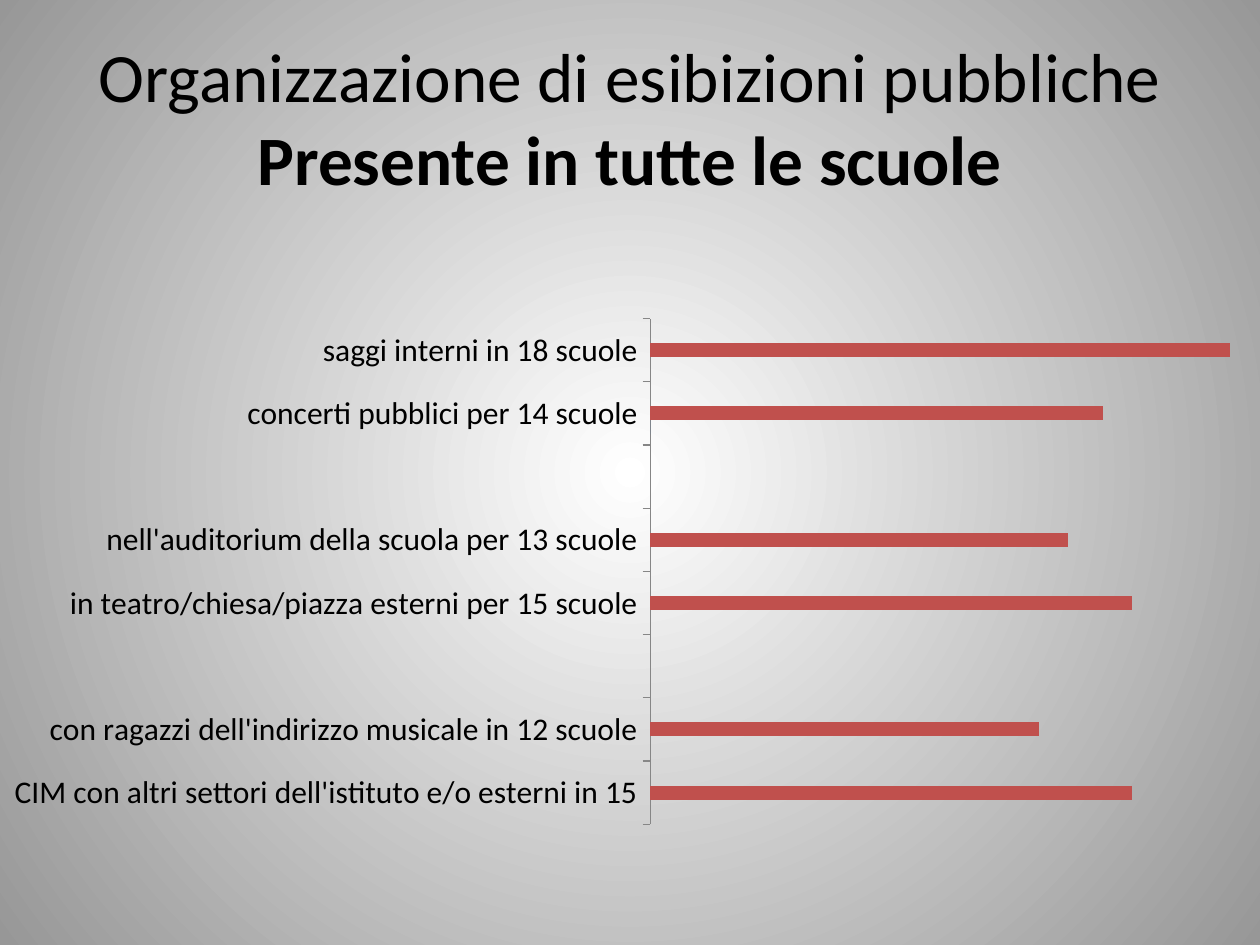
from lxml import etree
from pptx import Presentation
from pptx.chart.data import CategoryChartData
from pptx.dml.color import RGBColor
from pptx.enum.chart import XL_CHART_TYPE, XL_TICK_LABEL_POSITION, XL_TICK_MARK
from pptx.enum.text import MSO_ANCHOR, MSO_AUTO_SIZE, PP_ALIGN
from pptx.oxml import parse_xml
from pptx.oxml.ns import nsdecls, qn
from pptx.util import Inches, Pt

BAR = XL_CHART_TYPE.BAR_CLUSTERED
LOW = XL_TICK_LABEL_POSITION.LOW
TICK_OUT, TICK_NONE = XL_TICK_MARK.OUTSIDE, XL_TICK_MARK.NONE
MIDDLE, CENTER, NO_FIT = MSO_ANCHOR.MIDDLE, PP_ALIGN.CENTER, MSO_AUTO_SIZE.NONE

FONT = "Calibri"
COLORS = {"text": "000000", "center": "FFFFFF", "edge": "979797", "axis": "868686",
          "Series 1": "4F81BD", "Series 2": "C0504D", "Series 3": "9BBB59"}

# Boxes as shares of the slide: left, top, width, height
TITLE_BOX = (0.05, 0.04, 0.9, 1 / 6)
CHART_BOX = (-0.02, 0.317, 1.047, 0.576)
# Plot area as shares of the chart
PLOT = {"x": 0.512, "y": 0.035, "w": 0.488, "h": 0.929}

TITLE_LINES = [("Organizzazione di esibizioni pubbliche", False),
               ("Presente in tutte le scuole", True)]
CATEGORIES = ["CIM con altri settori dell'istituto e/o esterni in 15",
              "con ragazzi dell'indirizzo musicale in 12 scuole",
              "",
              "in teatro/chiesa/piazza esterni per 15 scuole",
              "nell'auditorium della scuola per 13 scuole",
              "",
              "concerti pubblici per 14 scuole",
              "saggi interni in 18 scuole"]
SERIES = {"Series 1": [None] * 6 + [0, None],
          "Series 2": [83, 67, None, 83, 72, None, 78, 100],
          "Series 3": [None] * 8}


def rgb(name):
    return RGBColor.from_string(COLORS[name])


def format_font(font, size, **extra):
    for key, value in {"name": FONT, "size": Pt(size), **extra}.items():
        setattr(font, key, value)
    font.color.rgb = rgb("text")


def to_box(prs, shares):
    x, y, w, h = shares
    return (int(x * prs.slide_width), int(y * prs.slide_height),
            int(w * prs.slide_width), int(h * prs.slide_height))


def paint_background(s):
    """Fill the slide with a circular gradient, light in the centre."""
    fill = s.background.fill
    fill.gradient()
    for stop, name in zip(fill.gradient_stops, ("center", "edge")):
        stop.color.rgb = rgb(name)
    grad = s.background._cSld.find(".//" + qn("a:gradFill"))
    for lin in grad.findall(qn("a:lin")):
        grad.remove(lin)
    grad.append(parse_xml(
        f'<a:path {nsdecls("a")} path="circle">'
        '<a:fillToRect l="50000" t="50000" r="50000" b="50000"/></a:path>'))


def fill_title(s, box):
    title = s.shapes.title
    title.left, title.top, title.width, title.height = box
    tf = title.text_frame
    tf.auto_size, tf.vertical_anchor = NO_FIT, MIDDLE
    p = tf.paragraphs[0]
    p.alignment = CENTER
    for i, (text, bold) in enumerate(TITLE_LINES):
        if i:
            p.add_line_break()
        r = p.add_run()
        r.text = text
        format_font(r.font, 39.6, bold=bold)


def set_plot_layout(chart):
    """Fix the inner plot area, leaving room for the long labels."""
    plot_area = chart._chartSpace.chart.plotArea
    for old in plot_area.findall(qn("c:layout")):
        plot_area.remove(old)
    layout = etree.Element(qn("c:layout"))
    manual = etree.SubElement(layout, qn("c:manualLayout"))
    values = {"layoutTarget": "inner", "xMode": "edge", "yMode": "edge", **PLOT}
    for tag, value in values.items():
        etree.SubElement(manual, qn(f"c:{tag}")).set("val", str(value))
    plot_area.insert(0, layout)


def add_bar_chart(s, box):
    data = CategoryChartData()
    data.categories = CATEGORIES
    for name, values in SERIES.items():
        data.add_series(name, values)
    chart = s.shapes.add_chart(BAR, *box, data).chart
    chart.has_legend = chart.has_title = False
    format_font(chart.font, 18)

    plot = chart.plots[0]
    plot.gap_width, plot.overlap, plot.vary_by_categories = 150, 0, False
    for series in plot.series:
        series.format.fill.solid()
        series.format.fill.fore_color.rgb = rgb(series.name)

    cat_axis, val_axis = chart.category_axis, chart.value_axis
    cat_axis.major_tick_mark, cat_axis.minor_tick_mark = TICK_OUT, TICK_NONE
    cat_axis.tick_label_position = LOW
    cat_axis.format.line.color.rgb = rgb("axis")
    cat_axis.format.line.width = Pt(0.75)
    val_axis.has_major_gridlines = val_axis.visible = False
    val_axis.minimum_scale, val_axis.maximum_scale = 0, 111
    set_plot_layout(chart)


def main():
    prs = Presentation()
    prs.slide_width, prs.slide_height = Inches(10), Inches(7.5)
    s = prs.slides.add_slide(prs.slide_layouts[5])
    paint_background(s)
    fill_title(s, to_box(prs, TITLE_BOX))
    add_bar_chart(s, to_box(prs, CHART_BOX))
    prs.save("out.pptx")


if __name__ == "__main__":
    main()
